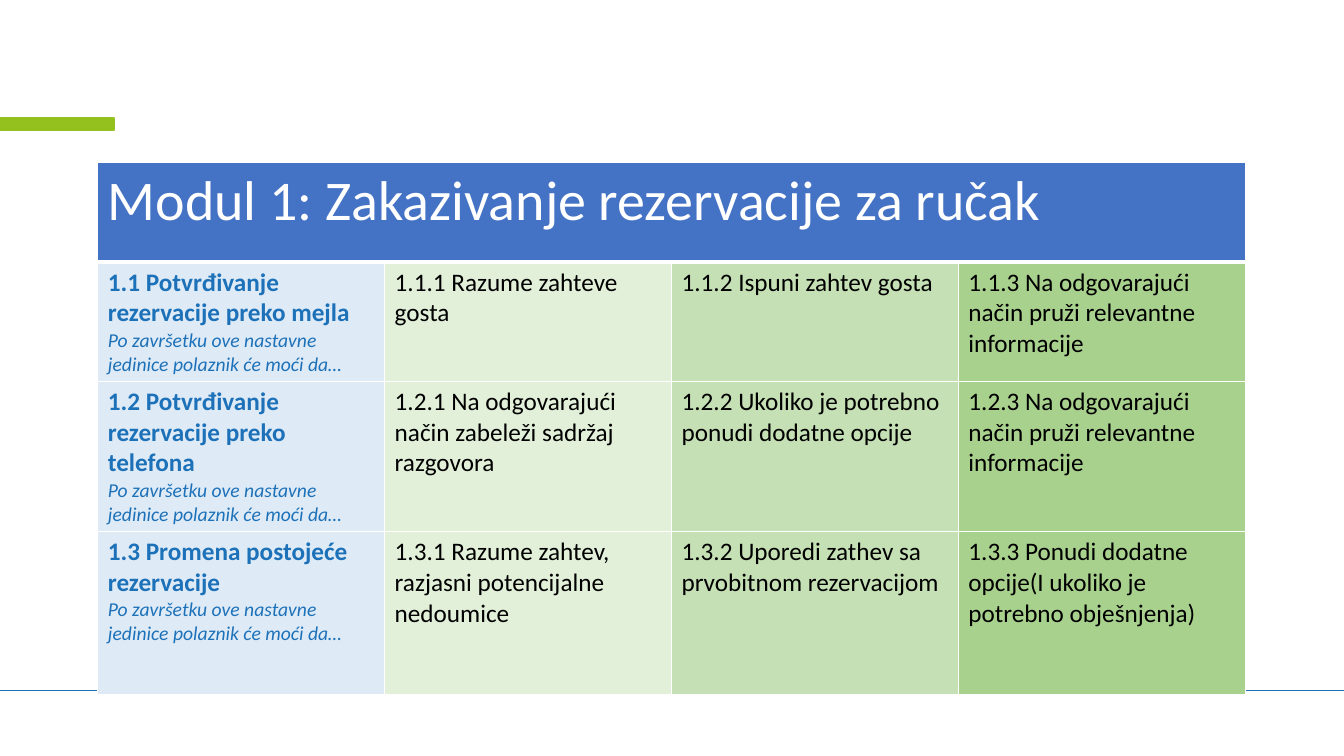
from dataclasses import dataclass

from lxml.etree import SubElement
from pptx import Presentation
from pptx.dml.color import RGBColor as RGB
from pptx.enum.shapes import MSO_CONNECTOR as CONNECTOR, MSO_SHAPE as SHAPE
from pptx.oxml.ns import qn
from pptx.util import Inches, Pt


@dataclass(frozen=True)
class Theme:
    font: str = "Calibri"
    blue: str = "1D71B8"
    green: str = "95C11F"
    header: str = "4472C4"
    white: str = "FFFFFF"
    black: str = "000000"
    columns: tuple = ("DEEBF7", "E2F0D9", "C5E0B4", "A9D18E")
    title_size: int = 40
    body_size: int = 18
    note_size: int = 14
    line: int = 1
    header_line: int = 3


class SlideBuilder:
    def __init__(self, prs, theme):
        self.theme = theme
        self.width, self.height = prs.slide_width, prs.slide_height
        self.s = prs.slides.add_slide(prs.slide_layouts[6])

    def box(self, x, y, w, h):
        """Turn shares of the slide's size into lengths."""
        return (int(x * self.width), int(y * self.height),
                int(w * self.width), int(h * self.height))

    def rule(self, y):
        top = int(y * self.height)
        ln = self.s.shapes.add_connector(CONNECTOR.STRAIGHT, 0, top, self.width, top)
        ln.line.color.rgb = RGB.from_string(self.theme.blue)
        ln.line.width = Pt(self.theme.line)
        SubElement(ln._element.spPr, qn("a:effectLst"))

    def bar(self, x, y, w, h):
        sp = self.s.shapes.add_shape(SHAPE.RECTANGLE, *self.box(x, y, w, h))
        sp.shadow.inherit = False
        color = RGB.from_string(self.theme.green)
        sp.fill.solid()
        sp.fill.fore_color.rgb = color
        sp.line.color.rgb = color
        sp.line.width = Pt(self.theme.line)

    def table(self, x, y, w, row_shares, n_cols):
        shape = self.s.shapes.add_table(len(row_shares), n_cols,
                                        *self.box(x, y, w, sum(row_shares)))
        tbl = shape.table
        tbl.horz_banding = False
        for row, share in zip(tbl.rows, row_shares):
            row.height = int(share * self.height)
        return tbl

    def cell(self, cell, fill, bottom=None):
        widths = {"L": self.theme.line, "R": self.theme.line,
                  "T": self.theme.line, "B": bottom or self.theme.line}
        tc_pr = cell._tc.get_or_add_tcPr()
        for side, width in widths.items():
            ln = SubElement(tc_pr, qn(f"a:ln{side}"), w=str(Pt(width)))
            SubElement(SubElement(ln, qn("a:solidFill")),
                       qn("a:srgbClr"), val=self.theme.white)
        cell.fill.solid()
        cell.fill.fore_color.rgb = RGB.from_string(fill)

    def run(self, p, text, size, color, bold=False, italic=False):
        r = p.add_run()
        r.text = text
        font = r.font
        font.name, font.size = self.theme.font, Pt(size)
        font.bold, font.italic = bold, italic
        font.color.rgb = RGB.from_string(color)


TITLE = "Modul 1: Zakazivanje rezervacije za ručak"
NOTE = "Po završetku ove nastavne jedinice polaznik će moći da…"
UNITS = [
    ("1.1 Potvrđivanje rezervacije preko mejla",
     "1.1.1 Razume zahteve gosta",
     "1.1.2 Ispuni zahtev gosta",
     "1.1.3 Na odgovarajući način pruži relevantne informacije"),
    ("1.2 Potvrđivanje rezervacije preko telefona",
     "1.2.1 Na odgovarajući način zabeleži sadržaj razgovora",
     "1.2.2 Ukoliko je potrebno ponudi dodatne opcije",
     "1.2.3 Na odgovarajući način pruži relevantne informacije"),
    ("1.3 Promena postojeće rezervacije",
     "1.3.1 Razume zahtev, razjasni potencijalne nedoumice",
     "1.3.2 Uporedi zathev sa prvobitnom rezervacijom",
     "1.3.3 Ponudi dodatne opcije(I ukoliko je potrebno obješnjenja)"),
]


def main():
    prs = Presentation()
    prs.slide_width, prs.slide_height = Inches(13.33), Inches(7.5)
    theme = Theme()
    slide = SlideBuilder(prs, theme)

    # Footer rule and accent bar
    slide.rule(6.85 / 7.5)
    slide.bar(0, 1.17 / 7.5, 1.13 / 13.33, 0.12 / 7.5)

    # Module table with a merged header
    row_shares = [h / 7.5 for h in (0.99, 1.18, 1.49, 1.62)]
    tbl = slide.table(0.97 / 13.33, 1.61 / 7.5, 11.38 / 13.33,
                      row_shares, len(theme.columns))
    for i in range(len(theme.columns)):
        slide.cell(tbl.cell(0, i), theme.header, theme.header_line)
    header = tbl.cell(0, 0)
    header.merge(tbl.cell(0, len(theme.columns) - 1))
    slide.run(header.text_frame.paragraphs[0], TITLE, theme.title_size, theme.white)

    # Units and their outcomes
    for i, unit in enumerate(UNITS, start=1):
        for j, (text, fill) in enumerate(zip(unit, theme.columns)):
            cell = tbl.cell(i, j)
            slide.cell(cell, fill)
            tf = cell.text_frame
            is_unit = j == 0
            slide.run(tf.paragraphs[0], text, theme.body_size,
                      theme.blue if is_unit else theme.black, bold=is_unit)
            if is_unit:
                slide.run(tf.add_paragraph(), NOTE, theme.note_size,
                          theme.blue, italic=True)

    prs.save("out.pptx")


if __name__ == "__main__":
    main()
